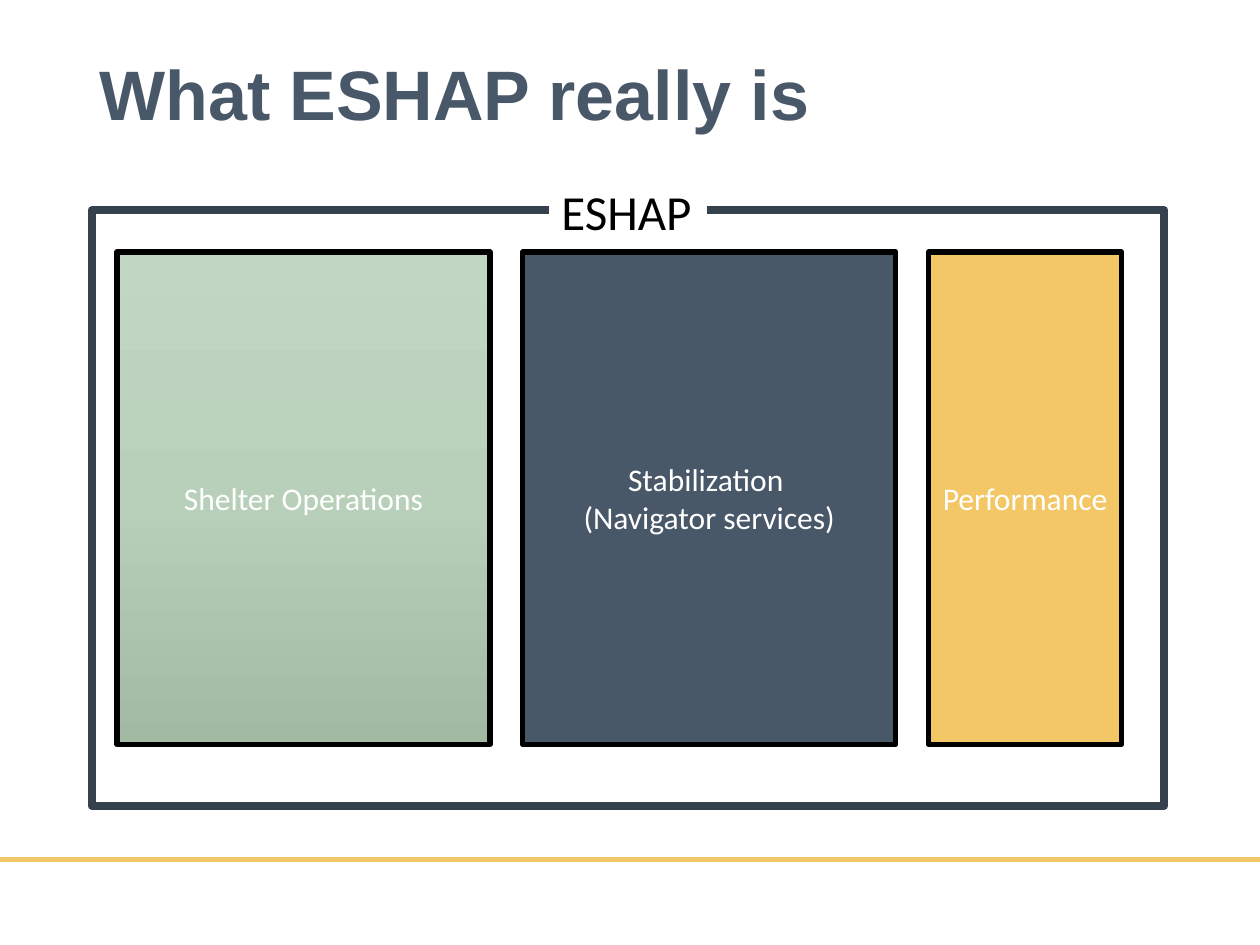
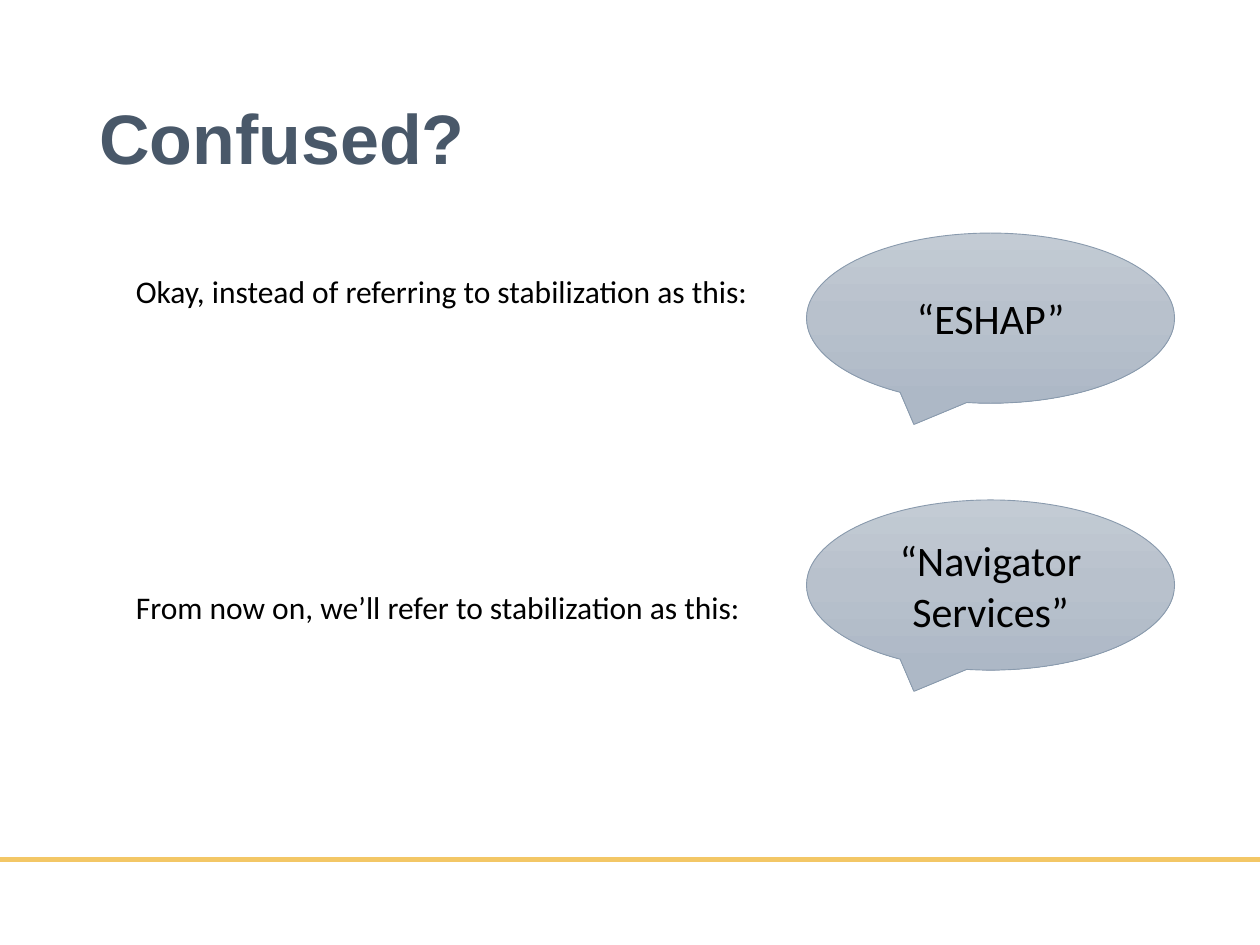
from copy import deepcopy
from dataclasses import dataclass

from pptx import Presentation
from pptx.dml.color import RGBColor
from pptx.enum import shapes, text
from pptx.oxml import parse_xml
from pptx.oxml.ns import nsdecls, qn
from pptx import util as u

KIND = shapes.MSO_SHAPE
WIDE, HIGH = 25.4, 19.05
NAVY, GOLD, EDGE, RIM = "495869", "F3C766", "36414E", "899AAD"
BLACK, WHITE = "000000", "FFFFFF"
GREEN = ("C2D6C4", "B8D0BA", "A2BAA4")
STEEL = ("C3CBD4", "B8C1CC", "ADB8C6")


@dataclass
class Box:
    left: float
    top: float
    width: float
    height: float

    def place(self) -> list:
        return [u.Cm(n) for n in (self.left, self.top, self.width, self.height)]


@dataclass
class Look:
    fill: tuple = ()
    line: str = BLACK
    weight: float = 3
    size: int = 18
    ink: str = WHITE


def paint(color, code: str) -> None:
    color.rgb = RGBColor.from_string(code)


def write(frame, lines: list, size: int, ink: str, face="Calibri", bold=False, align=text.PP_ALIGN.LEFT) -> None:
    for i, line in enumerate(lines):
        para = frame.add_paragraph() if i else frame.paragraphs[0]
        para.alignment = align
        run = para.add_run()
        run.text = line
        run.font.size, run.font.name, run.font.bold = u.Pt(size), face, bold
        paint(run.font.color, ink)


def shade(shape, codes: tuple) -> None:
    fill = shape.fill
    if not codes:
        fill.background()
    elif len(codes) == 1:
        fill.solid()
        paint(fill.fore_color, codes[0])
    else:
        fill.gradient()
        fill.gradient_angle = 270
        stops = shape._element.spPr.find(".//" + qn("a:gsLst"))
        stops.append(deepcopy(stops[-1]))
        for i, (stop, code) in enumerate(zip(fill.gradient_stops, codes)):
            stop.position = i / (len(codes) - 1)
            paint(stop.color, code)


def draw(slide, kind, box: Box, look: Look, lines=()) -> None:
    shape = slide.shapes.add_shape(kind, *box.place())
    shape.shadow.inherit = False
    shade(shape, look.fill)
    paint(shape.line.color, look.line)
    shape.line.width = u.Pt(look.weight)
    shape.text_frame.vertical_anchor = text.MSO_ANCHOR.MIDDLE
    write(shape.text_frame, lines, look.size, look.ink, align=text.PP_ALIGN.CENTER)


def label(slide, box: Box, words: str, size: int, fill=()) -> None:
    shape = slide.shapes.add_textbox(*box.place())
    shade(shape, fill)
    frame = shape.text_frame
    frame.word_wrap = False
    frame.auto_size = text.MSO_AUTO_SIZE.SHAPE_TO_FIT_TEXT
    write(frame, [words], size, BLACK)


def start(deck, words: str, height: float):
    slide = deck.slides.add_slide(deck.slide_layouts[5])
    rule = slide.shapes.add_connector(
        shapes.MSO_CONNECTOR.STRAIGHT, 0, u.Cm(17.32), u.Cm(WIDE), u.Cm(17.32))
    paint(rule.line.color, GOLD)
    rule.line.width = u.Pt(3)
    rule._element.spPr.append(parse_xml(f"<a:effectLst {nsdecls('a')}/>"))
    title = slide.shapes.title
    title.left, title.top, title.width, title.height = Box(1.75, 1.02, 21.9, height).place()
    frame = title.text_frame
    frame.auto_size = text.MSO_AUTO_SIZE.NONE
    frame.vertical_anchor = text.MSO_ANCHOR.MIDDLE
    write(frame, [words], 40, NAVY, "Arial", True)
    frame.paragraphs[0].line_spacing = 0.9
    return slide


def parts(deck) -> None:
    slide = start(deck, "What ESHAP really is", 1.9)
    draw(slide, KIND.RECTANGLE, Box(1.85, 4.24, 21.62, 12.01), Look(line=EDGE, weight=4.5))
    left, gap = 2.36, 0.66
    for width, fill, lines in (
        (7.52, GREEN, ["Shelter Operations"]),
        (7.52, (NAVY,), ["Stabilization ", "(Navigator services)"]),
        (3.89, (GOLD,), ["Performance"]),
    ):
        draw(slide, KIND.RECTANGLE, Box(left, 5.08, width, 9.93), Look(fill), lines)
        left += width + gap
    label(slide, Box(11.07, 3.53, 3.18, 1.45), "ESHAP", 28, (WHITE,))


def terms(deck) -> None:
    slide = start(deck, "Confused?", 3.68)
    look = Look(STEEL, RIM, 0.5, 24, BLACK)
    for i, (top, width, words, name) in enumerate((
        (5.36, 12.98, "Okay, instead of referring to stabilization as this:", "“ESHAP”"),
        (11.73, 12.83, "From now on, we’ll refer to stabilization as this:", "“Navigator Services”"),
    )):
        label(slide, Box(2.49, top, width, 1.02), words, 18)
        draw(slide, KIND.OVAL_CALLOUT, Box(16.26, 4.7 + i * 5.38, 7.42, 3.43), look, [name])


def main() -> None:
    deck = Presentation()
    deck.slide_width, deck.slide_height = u.Cm(WIDE), u.Cm(HIGH)
    parts(deck)
    terms(deck)
    deck.save("out.pptx")


if __name__ == "__main__":
    main()
